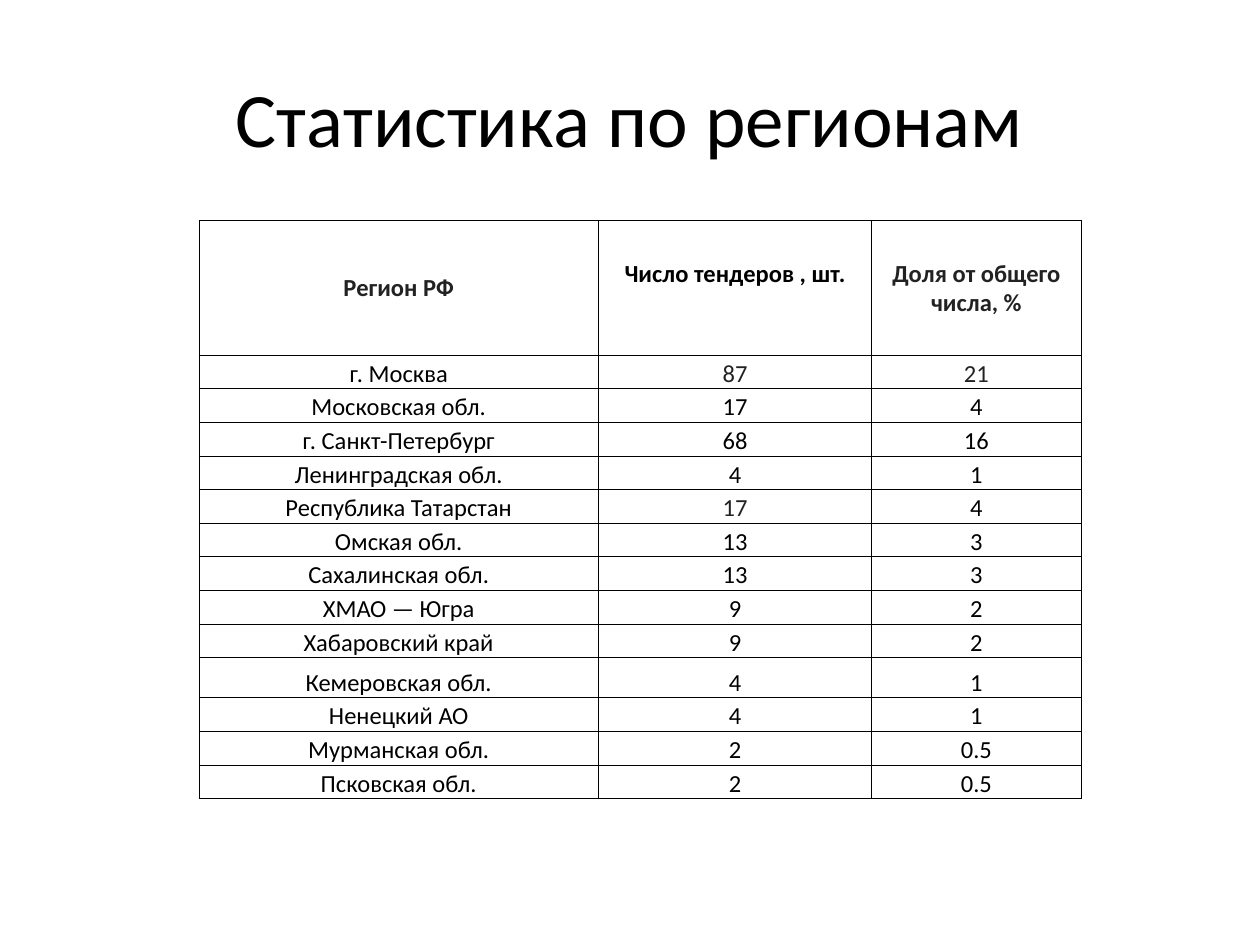
from copy import deepcopy
from dataclasses import dataclass

from lxml.etree import SubElement
from pptx import Presentation
from pptx.dml.color import RGBColor
from pptx.enum.text import MSO_ANCHOR, PP_ALIGN
from pptx.oxml.ns import qn
from pptx.util import Inches, Pt


@dataclass(frozen=True)
class Theme:
    font: str = "Calibri"
    black: str = "000000"
    gray: str = "222222"
    title: int = 44
    body: int = 14
    border: float = 0.5


THEME = Theme()

HEAD = ["Регион РФ", "Число тендеров , шт.\n", "Доля от общего числа, %"]
REGIONS = [
    ("г. Москва", "87", "21"),
    ("Московская обл.", "17", "4"),
    ("г. Санкт-Петербург", "68", "16"),
    ("Ленинградская обл.", "4", "1"),
    ("Республика Татарстан", "17", "4"),
    ("Омская обл.", "13", "3"),
    ("Сахалинская обл.", "13", "3"),
    ("ХМАО — Югра", "9", "2"),
    ("Хабаровский край", "9", "2"),
    ("Кемеровская обл.", "4", "1"),
    ("Ненецкий АО", "4", "1"),
    ("Мурманская обл.", "2", "0.5"),
    ("Псковская обл.", "2", "0.5"),
]
GRAY_CELLS = {(0, 0), (0, 2), (1, 1), (1, 2), (5, 1)}
WIDTHS = [3.17, 2.17, 1.66]
HEIGHT, HEAD_ROW, TALL_ROW = 4.59, 1.07, 0.32
TALL_INDEX = 10


def add_text(frame, text, size, color, bold=False):
    """Write one centred paragraph; a final newline leaves an empty line."""
    par = frame.paragraphs[0]
    par.alignment = PP_ALIGN.CENTER
    run = par.add_run()
    run.text = text.rstrip("\n")
    font = run.font
    font.name, font.size, font.bold = THEME.font, Pt(size), bold
    font.color.rgb = RGBColor.from_string(color)
    if text.endswith("\n"):
        par.add_line_break()
        props = run._r.find(qn("a:rPr"))
        par._p[-1].append(deepcopy(props))
        end = SubElement(par._p, qn("a:endParaRPr"), dict(props.attrib))
        end.extend(deepcopy(list(props)))


def add_title(slide, text):
    title = slide.shapes.title
    title.left, title.top = Inches(0.5), Inches(0.3)
    title.width, title.height = Inches(9), Inches(1.25)
    title.text_frame.vertical_anchor = MSO_ANCHOR.MIDDLE
    add_text(title.text_frame, text, THEME.title, THEME.black)


def add_border(cell):
    props = cell._tc.get_or_add_tcPr()
    for side in ("lnL", "lnR", "lnT", "lnB"):
        line = SubElement(props, qn(f"a:{side}"), w=str(Pt(THEME.border)))
        fill = SubElement(line, qn("a:solidFill"))
        SubElement(fill, qn("a:srgbClr"), val=THEME.black)


def fill_cell(cell, text, row, col):
    add_border(cell)
    cell.fill.background()
    cell.margin_left = cell.margin_right = cell.margin_top = Inches(0.01)
    cell.margin_bottom = 0
    cell.vertical_anchor = MSO_ANCHOR.BOTTOM if row else MSO_ANCHOR.MIDDLE
    color = THEME.gray if (row, col) in GRAY_CELLS else THEME.black
    add_text(cell.text_frame, text, THEME.body, color, bold=row == 0)


def add_stats(slide):
    rows = [HEAD, *REGIONS]
    table = slide.shapes.add_table(
        len(rows), len(WIDTHS), Inches(1.58), Inches(1.75),
        Inches(sum(WIDTHS)), Inches(HEIGHT)).table
    for col, width in zip(table.columns, WIDTHS):
        col.width = Inches(width)
    plain = (HEIGHT - HEAD_ROW - TALL_ROW) / (len(rows) - 2)
    special = {0: HEAD_ROW, TALL_INDEX: TALL_ROW}
    for r, texts in enumerate(rows):
        table.rows[r].height = Inches(special.get(r, plain))
        for c, text in enumerate(texts):
            fill_cell(table.cell(r, c), text, r, c)


def main():
    deck = Presentation()
    deck.slide_width, deck.slide_height = Inches(10), Inches(7.5)
    slide = deck.slides.add_slide(deck.slide_layouts[5])
    add_title(slide, "Статистика по регионам")
    add_stats(slide)
    deck.save("out.pptx")


if __name__ == "__main__":
    main()
